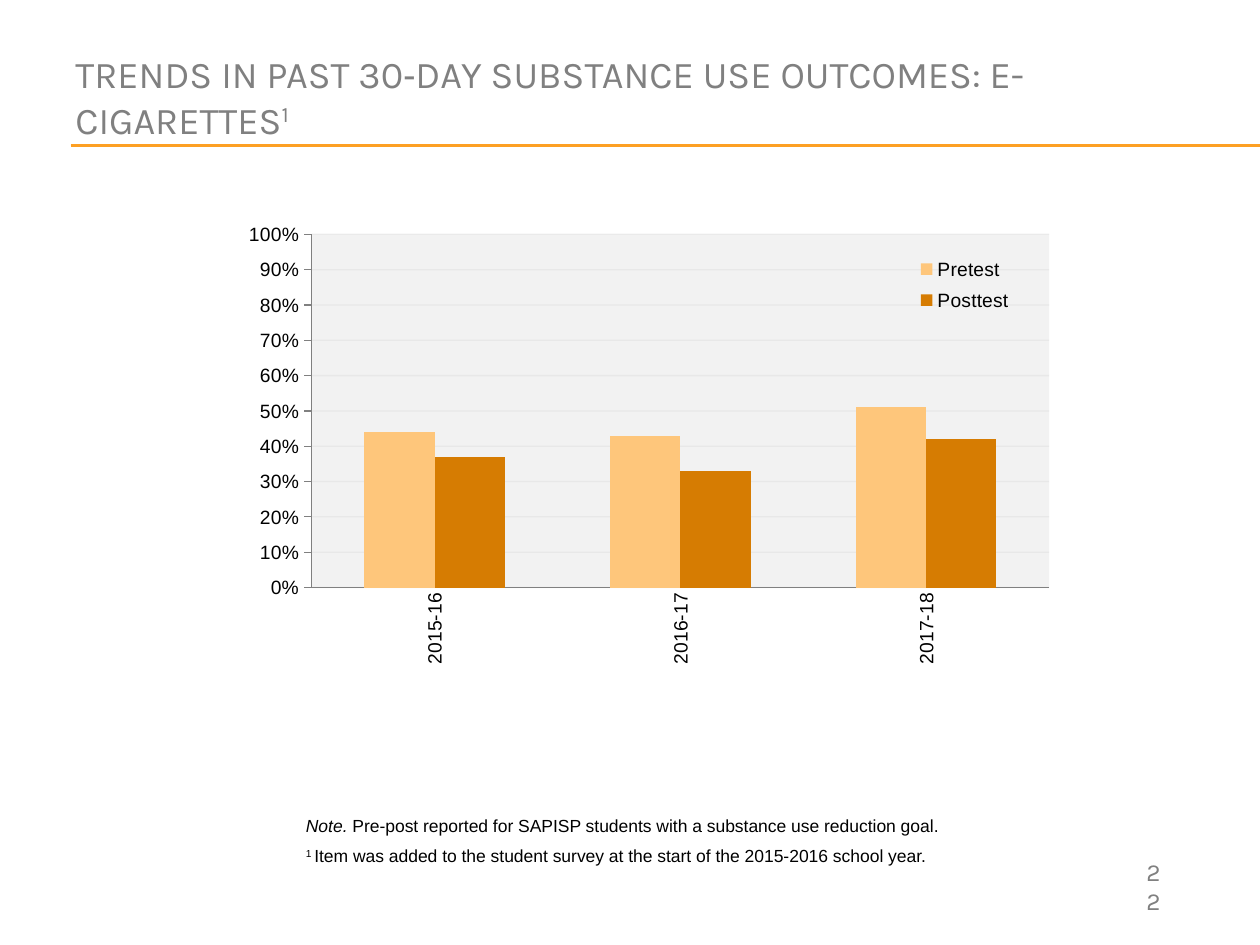
from lxml.etree import SubElement
from pptx import Presentation
from pptx.chart.data import CategoryChartData
from pptx.dml.color import RGBColor
from pptx.enum.chart import XL_CHART_TYPE, XL_LEGEND_POSITION, XL_TICK_MARK
from pptx.enum.text import MSO_ANCHOR
from pptx.oxml import parse_xml
from pptx.oxml.ns import nsdecls, qn
from pptx.util import Inches, Pt

ORANGE, GREY, BLACK = "FDA023", "808080", "000000"
TITLE_FORMAT = {"name": "Karla", "size": Pt(21.6)}
NUMBER_FORMAT = {"name": "Karla", "size": Pt(14)}
NOTE_FORMAT = {"name": "Arial", "size": Pt(10)}
CHART_FORMAT = {"name": "Arial", "size": Pt(11)}

YEARS = ["2015-16", "2016-17", "2017-18"]
SERIES = [
    ("Pretest", "FEC67B", (0.44, 0.43, 0.51)),
    ("Posttest", "D67C02", (0.37, 0.33, 0.42)),
]


def color(value):
    return RGBColor.from_string(value)


def set_font(font, values, text_color):
    for name, value in values.items():
        setattr(font, name, value)
    font.color.rgb = color(text_color)


def add_text(page, area, paragraphs, values, text_color, gap=0):
    """Each paragraph is a list of (text, style); style is '', 'italic' or 'super'."""
    box = page.shapes.add_textbox(*map(Inches, area))
    frame = box.text_frame
    frame.word_wrap = True
    for index, spans in enumerate(paragraphs):
        para = frame.paragraphs[0] if index == 0 else frame.add_paragraph()
        para.space_before = Pt(gap if index else 0)
        for text, style in spans:
            span = para.add_run()
            span.text = text
            set_font(span.font, values, text_color)
            span.font.italic = style == "italic"
            if style == "super":
                span.font._element.set("baseline", "30000")
    return frame


def add_rule(page, top):
    rule = page.shapes.add_connector(1, Inches(0.56), Inches(top), Inches(10), Inches(top))
    rule.line.color.rgb = color(ORANGE)
    rule.line.width = Pt(0.75)
    SubElement(rule._element.spPr, qn("a:effectLst"))


def manual_layout(x, y, width, height, inner=False):
    parts = [("layoutTarget", "inner")] if inner else []
    parts += [("xMode", "edge"), ("yMode", "edge"),
              ("x", x), ("y", y), ("w", width), ("h", height)]
    body = "".join(f'<c:{tag} val="{value}"/>' for tag, value in parts)
    return parse_xml(f'<c:layout {nsdecls("c")}><c:manualLayout>{body}'
                     '</c:manualLayout></c:layout>')


def style_axes(chart):
    years, shares = chart.category_axis, chart.value_axis
    for axis in (years, shares):
        set_font(axis.tick_labels.font, CHART_FORMAT, BLACK)
        axis.format.line.color.rgb = color(GREY)
    years.major_tick_mark = XL_TICK_MARK.NONE
    years.tick_labels.font._element.getparent().getparent().getparent().find(
        qn("a:bodyPr")).set("rot", "-5400000")

    shares.minimum_scale, shares.maximum_scale, shares.major_unit = 0, 1, 0.1
    shares.major_tick_mark = XL_TICK_MARK.OUTSIDE
    shares.tick_labels.number_format = "0%"
    shares.tick_labels.number_format_is_linked = False
    grid = shares.major_gridlines.format.line
    grid.color.rgb = color("D9D9D9")
    grid.width = Pt(0.75)
    tint = grid._ln.find(".//" + qn("a:srgbClr"))
    SubElement(tint, qn("a:alpha")).set("val", "40000")


def style_plot_area(chart):
    area = chart._chartSpace.chart.plotArea
    for old in area.findall(qn("c:layout")):
        area.remove(old)
    area.insert(0, manual_layout(0.106, 0.06, 0.857, 0.701, inner=True))
    area.append(parse_xml(
        f'<c:spPr {nsdecls("c", "a")}><a:solidFill><a:srgbClr val="F2F2F2"/>'
        '</a:solidFill><a:ln><a:noFill/></a:ln></c:spPr>'))


def style_legend(chart):
    chart.has_legend = True
    legend = chart.legend
    legend.position = XL_LEGEND_POSITION.RIGHT
    legend.include_in_layout = False
    set_font(legend.font, CHART_FORMAT, BLACK)
    element = legend._element
    for old in element.findall(qn("c:layout")):
        element.remove(old)
    element.find(qn("c:legendPos")).addnext(manual_layout(0.8, 0.09, 0.13, 0.14))
    element.find(qn("c:overlay")).set("val", "1")


def add_column_chart(page, area):
    data = CategoryChartData(number_format="0%")
    data.categories = YEARS
    for name, _, values in SERIES:
        data.add_series(name, values)
    chart = page.shapes.add_chart(
        XL_CHART_TYPE.COLUMN_CLUSTERED, *map(Inches, area), data).chart
    chart.has_title = False
    set_font(chart.font, CHART_FORMAT, BLACK)
    plot = chart.plots[0]
    plot.gap_width, plot.overlap, plot.vary_by_categories = 150, 0, False
    for series, (_, fill, _) in zip(plot.series, SERIES):
        series.format.fill.solid()
        series.format.fill.fore_color.rgb = color(fill)
    style_axes(chart)
    style_plot_area(chart)
    style_legend(chart)


def main():
    deck = Presentation()
    deck.slide_width, deck.slide_height = Inches(10), Inches(7.5)
    page = deck.slides.add_slide(deck.slide_layouts[6])

    # Double rule and page number
    for top in (1.15, 1.16):
        add_rule(page, top)
    add_text(page, (9, 6.75, 0.4, 0.34), [[("22", "")]], NUMBER_FORMAT, GREY)

    # Title
    title = add_text(
        page, (0.5, 0.33, 9.42, 0.87),
        [[("TRENDS IN PAST 30‑DAY SUBSTANCE USE OUTCOMES: E-CIGARETTES", ""),
          ("1", "super")]], TITLE_FORMAT, GREY)
    title.vertical_anchor = MSO_ANCHOR.MIDDLE

    # Chart
    add_column_chart(page, (1.75, 1.62, 6.83, 4))

    # Notes
    add_text(
        page, (2.33, 6.42, 6.66, 0.52),
        [[("Note.", "italic"),
          (" Pre‑post reported for SAPISP students with a substance use reduction goal.", "")],
         [("1 ", "super"),
          ("Item was added to the student survey at the start of the 2015-2016 school year.", "")]],
        NOTE_FORMAT, BLACK, gap=5)

    deck.save("out.pptx")


if __name__ == "__main__":
    main()
